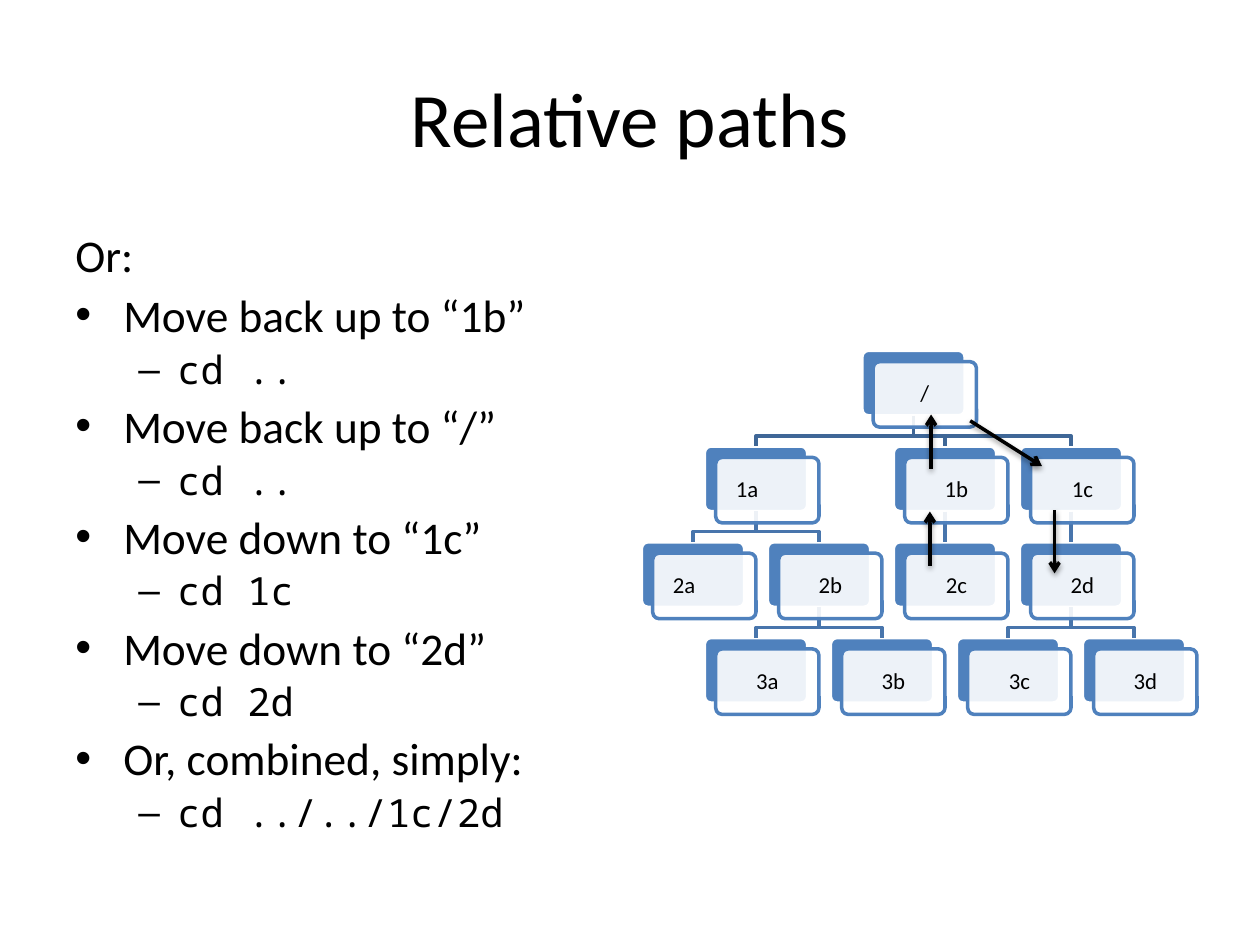
from dataclasses import dataclass

from lxml import etree
from pptx import Presentation
from pptx import util as u
from pptx.dml.color import RGBColor
from pptx.enum import shapes, text
from pptx.oxml import ns

BLUE, WHITE, BLACK = "4F81BD", "FFFFFF", "000000"
BOX_WIDTH, BOX_HEIGHT = 0.82, 0.52
COLUMN_STEP, LEVEL_STEP = 0.5, 0.76
TREE_LEFT, TREE_TOP = 5.09, 2.78
FRONT_OFFSET = 0.09
ELBOW_DROP = 0.16


@dataclass(frozen=True)
class Node:
    label: str
    column: float
    level: int
    parent: int | None = None

    @property
    def left(self) -> float:
        return TREE_LEFT + self.column * COLUMN_STEP

    @property
    def top(self) -> float:
        return TREE_TOP + self.level * LEVEL_STEP

    @property
    def middle(self) -> float:
        return self.left + BOX_WIDTH / 2


@dataclass(frozen=True)
class Arrow:
    start: tuple[float, float]
    end: tuple[float, float]


@dataclass(frozen=True)
class Style:
    font: str
    size: float
    before: float
    margin: float = 0
    hanging: float = 0
    bullet: str = ""


INTRO = Style("Calibri", 25.9, 3.4)
STEP = Style("Calibri", 25.9, 3.4, 0.38, 0.38, "•")
COMMAND = Style("Noto Sans Mono", 22.2, 2.2, 0.81, 0.31, "–")

STEPS = [
    ("Move back up to “1b”", "cd .."),
    ("Move back up to “/”", "cd .."),
    ("Move down to “1c”", "cd 1c"),
    ("Move down to “2d”", "cd 2d"),
    ("Or, combined, simply:", "cd ../../1c/2d"),
]

NODES = [
    Node("/", 3.5, 0),
    Node("1a\t", 1, 1, 0),
    Node("2a\t", 0, 2, 1),
    Node("2b", 2, 2, 1),
    Node("3a", 1, 3, 3),
    Node("3b", 3, 3, 3),
    Node("1b", 4, 1, 0),
    Node("2c", 4, 2, 6),
    Node("1c", 6, 1, 0),
    Node("2d", 6, 2, 8),
    Node("3c", 5, 3, 9),
    Node("3d", 7, 3, 9),
]

ARROWS = [
    Arrow((7.38, 4.49), (7.38, 4.06)),
    Arrow((7.39, 3.72), (7.39, 3.29)),
    Arrow((7.7, 3.34), (8.27, 3.7)),
    Arrow((8.37, 4.05), (8.37, 4.55)),
]


def colour(value: str) -> RGBColor:
    return RGBColor.from_string(value)


def add_child(parent, tag: str, **attributes):
    return etree.SubElement(parent, ns.qn(tag), attributes)


def set_line(shape, value: str) -> None:
    shape.line.color.rgb = colour(value)
    shape.line.width = u.Pt(2)


def format_runs(para, font: str, size: float) -> None:
    for span in para.runs:
        span.font.name = font
        span.font.size = u.Pt(size)
        span.font.color.rgb = colour(BLACK)


def add_text_box(page, left: float, top: float, width: float, height: float):
    box = page.shapes.add_textbox(
        u.Inches(left), u.Inches(top), u.Inches(width), u.Inches(height)
    )
    box.text_frame.word_wrap = True
    return box.text_frame


def draw_title(page) -> None:
    frame = add_text_box(page, 0.5, 0.3, 9, 1.25)
    frame.vertical_anchor = text.MSO_ANCHOR.MIDDLE
    frame.text = "Relative paths"
    para = frame.paragraphs[0]
    para.alignment = text.PP_ALIGN.CENTER
    format_runs(para, "Calibri", 44)


def draw_steps(page) -> None:
    lines = [("Or:", INTRO)]
    for step, command in STEPS:
        lines += [(step, STEP), (command, COMMAND)]
    frame = add_text_box(page, 0.5, 1.75, 4.42, 4.95)
    frame.text = "\n".join(line for line, style in lines)
    for para, (line, style) in zip(frame.paragraphs, lines):
        para.space_before = u.Pt(style.before)
        format_runs(para, style.font, style.size)
        if style.bullet:
            para.level = int(style is COMMAND)
            properties = para._p.get_or_add_pPr()
            properties.set("marL", str(u.Inches(style.margin)))
            properties.set("indent", str(-u.Inches(style.hanging)))
            add_child(properties, "a:buFont", typeface="Arial")
            add_child(properties, "a:buChar", char=style.bullet)


def draw_card(page, node: Node, offset: float, fill: str, line: str):
    card = page.shapes.add_shape(
        shapes.MSO_SHAPE.ROUNDED_RECTANGLE,
        u.Inches(node.left + offset), u.Inches(node.top + offset),
        u.Inches(BOX_WIDTH), u.Inches(BOX_HEIGHT),
    )
    card.adjustments[0] = 0.1
    card.shadow.inherit = False
    card.fill.solid()
    card.fill.fore_color.rgb = colour(fill)
    set_line(card, line)
    return card


def draw_label_card(page, node: Node) -> None:
    card = draw_card(page, node, FRONT_OFFSET, WHITE, BLUE)
    fill_colour = card._element.spPr.find(ns.qn("a:solidFill"))[0]
    add_child(fill_colour, "a:alpha", val="90000")
    frame = card.text_frame
    frame.margin_left = frame.margin_right = u.Inches(0.06)
    frame.margin_top = frame.margin_bottom = u.Inches(0.06)
    frame.vertical_anchor = text.MSO_ANCHOR.MIDDLE
    frame.text = node.label
    para = frame.paragraphs[0]
    para.alignment = text.PP_ALIGN.CENTER
    para.line_spacing = 0.9
    format_runs(para, "Calibri", 13)


def add_line(page, start: tuple[float, float], end: tuple[float, float], value: str):
    line = page.shapes.add_connector(
        shapes.MSO_CONNECTOR.STRAIGHT, *(u.Inches(length) for length in start + end)
    )
    set_line(line, value)
    return line, add_child(line._element.spPr, "a:effectLst")


def draw_branch(page, parent: Node, child: Node, parent_card, child_card) -> None:
    value = "4875AC" if parent.level else "3F6797"
    bottom = parent.top + BOX_HEIGHT
    start, end = (parent.middle, bottom), (child.middle, child.top)
    if parent.column == child.column:
        line, effects = add_line(page, start, end, value)
        line.begin_connect(parent_card, 2)
        line.end_connect(child_card, 0)
        return
    turn = bottom + ELBOW_DROP
    points = [(parent.middle, turn), (child.middle, turn), end]
    builder = page.shapes.build_freeform(*map(u.Inches, start))
    builder.add_line_segments([(u.Inches(x), u.Inches(y)) for x, y in points], close=False)
    elbow = builder.convert_to_shape()
    elbow.fill.background()
    elbow.shadow.inherit = False
    set_line(elbow, value)


def draw_tree(page) -> None:
    cards = [draw_card(page, node, 0, BLUE, WHITE) for node in NODES]
    for node, card in zip(NODES, cards):
        if node.parent is not None:
            draw_branch(page, NODES[node.parent], node, cards[node.parent], card)
    for node in NODES:
        draw_label_card(page, node)


def draw_arrow(page, arrow: Arrow) -> None:
    line, effects = add_line(page, arrow.start, arrow.end, BLACK)
    add_child(line.line._get_or_add_ln(), "a:tailEnd", type="arrow")
    shadow = add_child(
        effects, "a:outerShdw", blurRad=str(u.Pt(3.1)), dist=str(u.Pt(1.6)),
        dir="5400000", rotWithShape="0",
    )
    shade = add_child(shadow, "a:srgbClr", val=BLACK)
    add_child(shade, "a:alpha", val="38000")


def main() -> None:
    deck = Presentation()
    deck.slide_width, deck.slide_height = u.Inches(10), u.Inches(7.5)
    page = deck.slides.add_slide(deck.slide_layouts[6])
    draw_title(page)
    draw_steps(page)
    draw_tree(page)
    for arrow in ARROWS:
        draw_arrow(page, arrow)
    deck.save("out.pptx")


if __name__ == "__main__":
    main()
